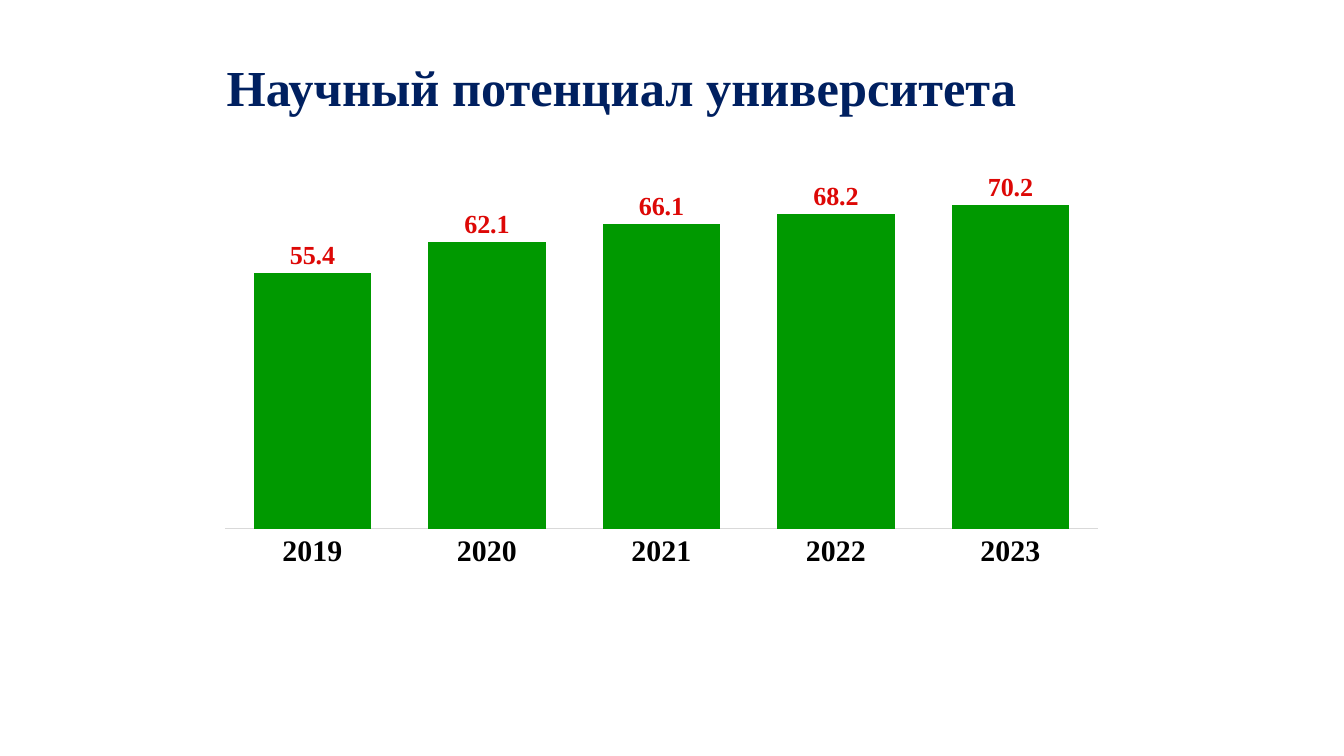
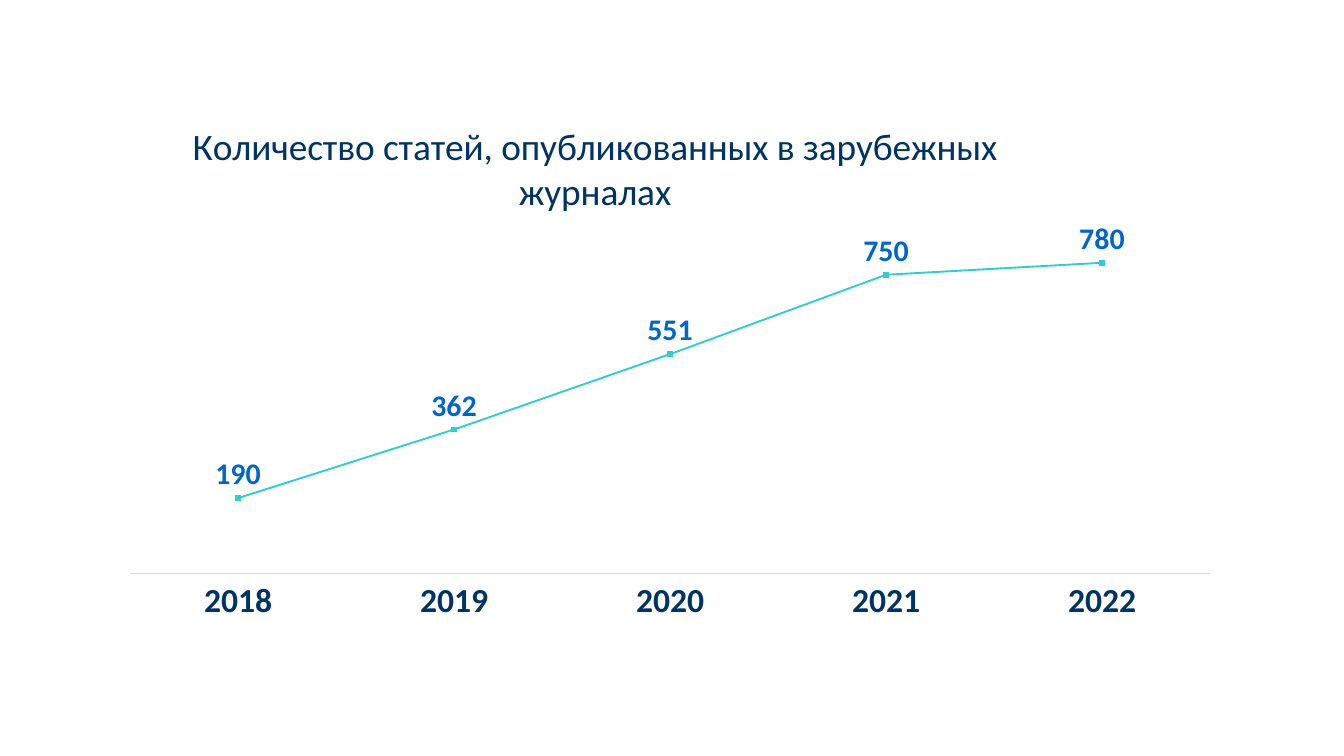
from dataclasses import dataclass

from pptx import Presentation
from pptx.chart.data import CategoryChartData
from pptx.dml.color import RGBColor
from pptx.enum.chart import XL_CHART_TYPE as ChartType
from pptx.enum.chart import XL_LABEL_POSITION as LabelPosition
from pptx.enum.chart import XL_TICK_LABEL_POSITION as TickLabels
from pptx.enum.chart import XL_TICK_MARK as TickMark
from pptx.enum.text import MSO_ANCHOR, MSO_AUTO_SIZE, PP_ALIGN
from pptx.oxml import parse_xml
from pptx.oxml.ns import nsdecls, qn
from pptx.util import Inches, Pt


@dataclass(frozen=True)
class Theme:
    serif: str = "Times New Roman"
    sans: str = "Calibri"
    base: str = "Roboto"
    black: str = "000000"
    heading: str = "002060"
    navy: str = "003366"
    blue: str = "0066CC"
    red: str = "DD0806"
    green: str = "009900"
    turquoise: str = "33CCCC"
    axis: str = "D9D9D9"
    base_size: int = 10
    heading_size: int = 54
    chart_title_size: int = 40


theme = Theme()


def set_font(font, name, size, color, bold=False):
    font.name = name
    font.size = Pt(size)
    font.bold = bold
    font.color.rgb = RGBColor.from_string(color)


def set_layout(parent, index, **settings):
    """Give a chart part a manual layout, as fractions of the chart."""
    for old in parent.findall(qn("c:layout")):
        parent.remove(old)
    items = "".join(f'<c:{key} val="{value}"/>' for key, value in settings.items())
    parent.insert(index, parse_xml(
        f'<c:layout {nsdecls("c")}><c:manualLayout>{items}</c:manualLayout></c:layout>'))


deck = Presentation()
deck.slide_width, deck.slide_height = Inches(20), Inches(11.25)
title_only, blank = deck.slide_layouts[5], deck.slide_layouts[6]

charts = [
    dict(kind=ChartType.COLUMN_CLUSTERED, layout=title_only,
         heading="Научный потенциал университета",
         place=(3.2, 1.87, 13.21, 6.81), plot=(0.011, 0.073, 0.984, 0.809),
         first_year=2019, values=(55.4, 62.1, 66.1, 68.2, 70.2),
         top=80, step=20, format="0.####", position=LabelPosition.OUTSIDE_END,
         year_font=(theme.serif, 32, theme.black, True),
         label_font=(theme.serif, 28, theme.red, True)),
    dict(kind=ChartType.LINE, layout=blank,
         heading="Количество статей, опубликованных в зарубежных журналах",
         place=(1.79, 1.55, 16.3, 7.82), plot=(0.009, 0.135, 0.986, 0.759),
         first_year=2018, values=(190, 362, 551, 750, 780),
         top=1000, step=200, format="0", position=LabelPosition.ABOVE,
         year_font=(theme.sans, 36, theme.navy, True),
         label_font=(theme.sans, 32, theme.blue, True)),
]

for item in charts:
    page = deck.slides.add_slide(item["layout"])
    is_column = item["kind"] == ChartType.COLUMN_CLUSTERED

    # Chart and its data
    data = CategoryChartData(number_format=item["format"])
    data.categories = [str(item["first_year"] + i) for i in range(len(item["values"]))]
    data.add_series("Series 1", item["values"])
    chart = page.shapes.add_chart(
        item["kind"], *map(Inches, item["place"]), data).chart
    chart.has_legend = False
    set_font(chart.font, theme.base, theme.base_size, theme.black)
    left, top, width, height = item["plot"]
    set_layout(chart.element.find(".//" + qn("c:plotArea")), 0,
               layoutTarget="inner", xMode="edge", yMode="edge",
               x=left, y=top, w=width, h=height)

    # Axes
    years, scale = chart.category_axis, chart.value_axis
    for axis in (years, scale):
        axis.major_tick_mark = axis.minor_tick_mark = TickMark.NONE
        axis.has_major_gridlines = False
    years.tick_label_position = TickLabels.LOW
    set_font(years.tick_labels.font, *item["year_font"])
    years.format.line.color.rgb = RGBColor.from_string(theme.axis)
    years.format.line.width = Pt(1)
    scale.tick_label_position = TickLabels.NONE
    scale.minimum_scale, scale.maximum_scale = 0, item["top"]
    scale.major_unit = item["step"]
    scale.format.line.fill.background()
    set_font(scale.tick_labels.font, theme.sans, theme.base_size, theme.black)

    # Value labels
    plot = chart.plots[0]
    plot.vary_by_categories = False
    series = plot.series[0]
    labels = series.data_labels
    labels.show_value = True
    labels.position = item["position"]
    labels.number_format = item["format"]
    labels.number_format_is_linked = False
    set_font(labels.font, *item["label_font"])

    if is_column:
        # Columns, chart border and slide title
        plot.gap_width, plot.overlap = 49, -11
        series.format.fill.solid()
        series.format.fill.fore_color.rgb = RGBColor.from_string(theme.green)
        chart.has_title = False
        chart.element.find(qn("c:chart")).addnext(parse_xml(
            f'<c:spPr {nsdecls("c", "a")}><a:ln w="{Pt(1)}"><a:solidFill>'
            '<a:srgbClr val="FFFFFF"/></a:solidFill></a:ln></c:spPr>'))
        box = page.shapes.title
        box.left, box.top = Inches(3.05), Inches(0.79)
        box.width, box.height = Inches(12.4), Inches(0.93)
        frame = box.text_frame
        frame.text = item["heading"]
        frame.word_wrap = True
        frame.auto_size = MSO_AUTO_SIZE.SHAPE_TO_FIT_TEXT
        frame.vertical_anchor = MSO_ANCHOR.TOP
        frame.margin_left = frame.margin_right = Inches(0.05)
        frame.margin_top = frame.margin_bottom = Inches(0.05)
        para = frame.paragraphs[0]
        para.alignment = PP_ALIGN.CENTER
        set_font(para.font, theme.serif, theme.heading_size, theme.heading, True)
    else:
        # Line and chart title
        series.smooth = False
        series.marker.style = None
        series.format.line.color.rgb = RGBColor.from_string(theme.turquoise)
        series.format.line.width = Pt(2)
        frame = chart.chart_title.text_frame
        frame.text = item["heading"]
        set_font(frame.paragraphs[0].font, theme.sans,
                 theme.chart_title_size, theme.navy)
        title = chart.element.find(".//" + qn("c:title"))
        set_layout(title, 1, xMode="edge", yMode="edge", x=0.06, y=0.02)
        title.find(qn("c:overlay")).set("val", "1")

deck.save("out.pptx")
